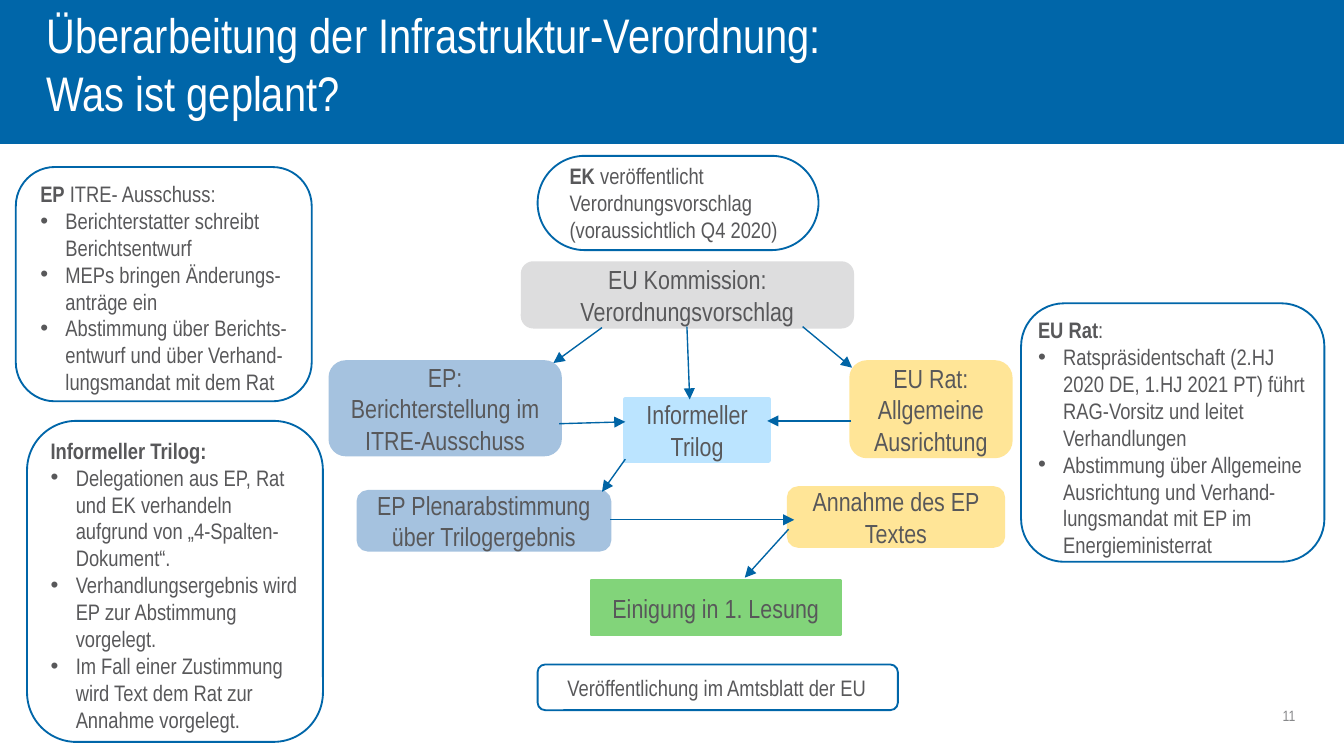
from lxml import etree
from pptx import Presentation
from pptx.dml.color import RGBColor
from pptx.enum.shapes import MSO_CONNECTOR, MSO_SHAPE
from pptx.enum.text import MSO_ANCHOR, MSO_AUTO_SIZE, PP_ALIGN
from pptx.oxml.ns import qn
from pptx.util import Pt

RECT, ROUND = MSO_SHAPE.RECTANGLE, MSO_SHAPE.ROUNDED_RECTANGLE
STRAIGHT = MSO_CONNECTOR.STRAIGHT
MIDDLE, TOP = MSO_ANCHOR.MIDDLE, MSO_ANCHOR.TOP
LEFT, CENTER, RIGHT = PP_ALIGN.LEFT, PP_ALIGN.CENTER, PP_ALIGN.RIGHT
FIXED = MSO_AUTO_SIZE.NONE

FONT = "Arial Narrow"
COLORS = {
    "blue": "0066A9", "arrow": "0064A5", "text": "58585A", "number": "87888A",
    "white": "FFFFFF", "commission": "DDDDDE", "parliament": "A5C2DF",
    "council": "FFE597", "trilogue": "BBE4FF", "agreement": "82D47A",
}
INDENT = 13.5

# Positions are relative to the top left corner of the flow chart.
STEPS = [
    ("EU Kommission: Verordnungsvorschlag", ROUND, "commission", (103, 0, 176.5, 34)),
    ("Informeller Trilog", RECT, "trilogue", (158, 73, 77, 33)),
    ("EP: Berichterstellung im ITRE-Ausschuss", ROUND, "parliament", (0, 53, 123, 49.5)),
    ("EU Rat: Allgemeine Ausrichtung", ROUND, "council", (279, 53, 85.5, 50.5)),
    ("EP Plenarabstimmung über Trilogergebnis", ROUND, "parliament", (15, 122.5, 134.5, 31)),
    ("Annahme des EP Textes", ROUND, "council", (245.5, 120.5, 115, 31)),
    ("Einigung in 1. Lesung", RECT, "agreement", (140, 170, 133, 29)),
]
ARROWS = [
    (145.5, 34.5, 119.5, 53.5),
    (253, 34, 279.5, 56),
    (191, 34, 192.5, 73),
    (122.5, 86, 158, 85),
    (279, 84.5, 234, 84.5),
    (158, 105, 145.5, 122.5),
    (150, 137.5, 248.5, 137.5),
    (245.5, 142.5, 222, 168.5),
]

# Outline box, text box relative to it, bold lead, rest of the lead, bullets
NOTES = [
    ((288, 83.5, 150.5, 50.5), (10, 0, 132, 51), "EK",
     " veröffentlicht Verordnungsvorschlag (voraussichtlich Q4 2020)", []),
    ((8.5, 89.5, 158.5, 125.5), (6, 3.5, 152, 124), "EP", " ITRE- Ausschuss:", [
        "Berichterstatter schreibt Berichtsentwurf",
        "MEPs bringen Änderungs-\vanträge ein",
        "Abstimmung über Berichts-\ventwurf und über Verhand-\vlungsmandat mit dem Rat",
    ]),
    ((547, 162.5, 162.5, 138.5), (2, 3.5, 163, 138), "EU Rat", ":", [
        "Ratspräsidentschaft (2.HJ 2020 DE, 1.HJ 2021 PT) führt RAG-Vorsitz "
        "und leitet Verhandlungen",
        "Abstimmung über Allgemeine Ausrichtung und Verhand-lungsmandat mit EP "
        "im Energieministerrat",
    ]),
    ((14.5, 225.5, 158.5, 172), (5.5, 5, 148.5, 167), "Informeller Trilog:", "", [
        "Delegationen aus EP, Rat und EK verhandeln aufgrund von „4-Spalten-Dokument“.",
        "Verhandlungsergebnis wird EP zur Abstimmung vorgelegt.",
        "Im Fall einer Zustimmung wird Text dem Rat zur Annahme vorgelegt.",
    ]),
]


def color(name):
    return RGBColor.from_string(COLORS[name])


def points(*values):
    return [Pt(value) for value in values]


def shift(box, left, top):
    return (box[0] + left, box[1] + top, *box[2:])


def style(para, size, name="text", align=LEFT):
    para.alignment = align
    para.font.name = FONT
    para.font.size = Pt(size)
    para.font.color.rgb = color(name)


def set_margins(frame, left=0, top=0, right=0, bottom=0):
    frame.margin_left, frame.margin_top = Pt(left), Pt(top)
    frame.margin_right, frame.margin_bottom = Pt(right), Pt(bottom)


def add_box(page, kind, box, line, width, fill=None):
    shape = page.shapes.add_shape(kind, *points(*box))
    shape.shadow.inherit = False
    if fill:
        shape.fill.solid()
        shape.fill.fore_color.rgb = color(fill)
    else:
        shape.fill.background()
    shape.line.color.rgb = color(line)
    shape.line.width = Pt(width)
    return shape


def add_text_box(page, box, anchor=TOP):
    frame = page.shapes.add_textbox(*points(*box)).text_frame
    frame.word_wrap = True
    frame.vertical_anchor = anchor
    return frame


def add_arrow(page, ends):
    arrow = page.shapes.add_connector(STRAIGHT, *points(*ends))
    arrow.line.color.rgb = color("arrow")
    arrow.line.width = Pt(0.75)
    outline = arrow.line._get_or_add_ln()
    etree.SubElement(outline, qn("a:tailEnd"), type="triangle")
    etree.SubElement(arrow._element.spPr, qn("a:effectLst"))


def add_bullet(para):
    properties = para._p.get_or_add_pPr()
    properties.set("marL", str(Pt(INDENT)))
    properties.set("indent", str(-Pt(INDENT)))
    etree.SubElement(properties, qn("a:buFont"), typeface="Arial")
    etree.SubElement(properties, qn("a:buChar"), char="•")


def add_header(page, box):
    left, top, width, height = box
    band = add_box(page, RECT, box, "blue", 1, "blue")
    page.shapes._spTree.insert(2, band._element)  # behind the title

    title = page.shapes.title
    title.left, title.top, title.width, title.height = points(
        left + 25, top + 21, width - 196, height - 48)
    frame = title.text_frame
    frame.text = "Überarbeitung der Infrastruktur-Verordnung:\vWas ist geplant?"
    frame.auto_size = FIXED
    frame.vertical_anchor = MIDDLE
    set_margins(frame, bottom=3)
    style(frame.paragraphs[0], 26, "white")


def add_flow(page, left, top):
    for text, kind, fill, box in STEPS:
        step = add_box(page, kind, shift(box, left, top), fill, 2, fill)
        step.text_frame.text = text
        style(step.text_frame.paragraphs[0], 14, align=CENTER)
    for x1, y1, x2, y2 in ARROWS:
        add_arrow(page, (x1 + left, y1 + top, x2 + left, y2 + top))


def add_note(page, box, text_box, lead, rest, bullets):
    outline = add_box(page, ROUND, box, "blue", 1)
    if not bullets:
        outline.adjustments[0] = 0.5
    frame = add_text_box(page, shift(text_box, *box[:2]))
    para = frame.paragraphs[0]
    span = para.add_run()
    span.text = lead
    span.font.bold = True
    if rest:
        para.add_run().text = rest
    style(para, 12)
    for text in bullets:
        para = frame.add_paragraph()
        para.text = text
        add_bullet(para)
        style(para, 12)


def add_publication(page, box):
    frame = add_box(page, ROUND, box, "blue", 1).text_frame
    frame.text = "Veröffentlichung im Amtsblatt der EU"
    set_margins(frame, 6, 3.5, 7, 3.5)
    style(frame.paragraphs[0], 12, align=CENTER)


def add_page_number(page, box):
    frame = add_text_box(page, box, MIDDLE)
    frame.text = "11"
    set_margins(frame)
    style(frame.paragraphs[0], 8, "number", RIGHT)


def main():
    deck = Presentation()
    deck.slide_width, deck.slide_height = points(720, 405)
    page = deck.slides.add_slide(deck.slide_layouts[5])
    add_header(page, (0, 0, 720, 76.5))
    add_flow(page, 177, 141)
    for note in NOTES:
        add_note(page, *note)
    add_publication(page, (288, 356, 193, 24.5))
    add_page_number(page, (609, 376, 85, 14.5))
    deck.save("out.pptx")


if __name__ == "__main__":
    main()
